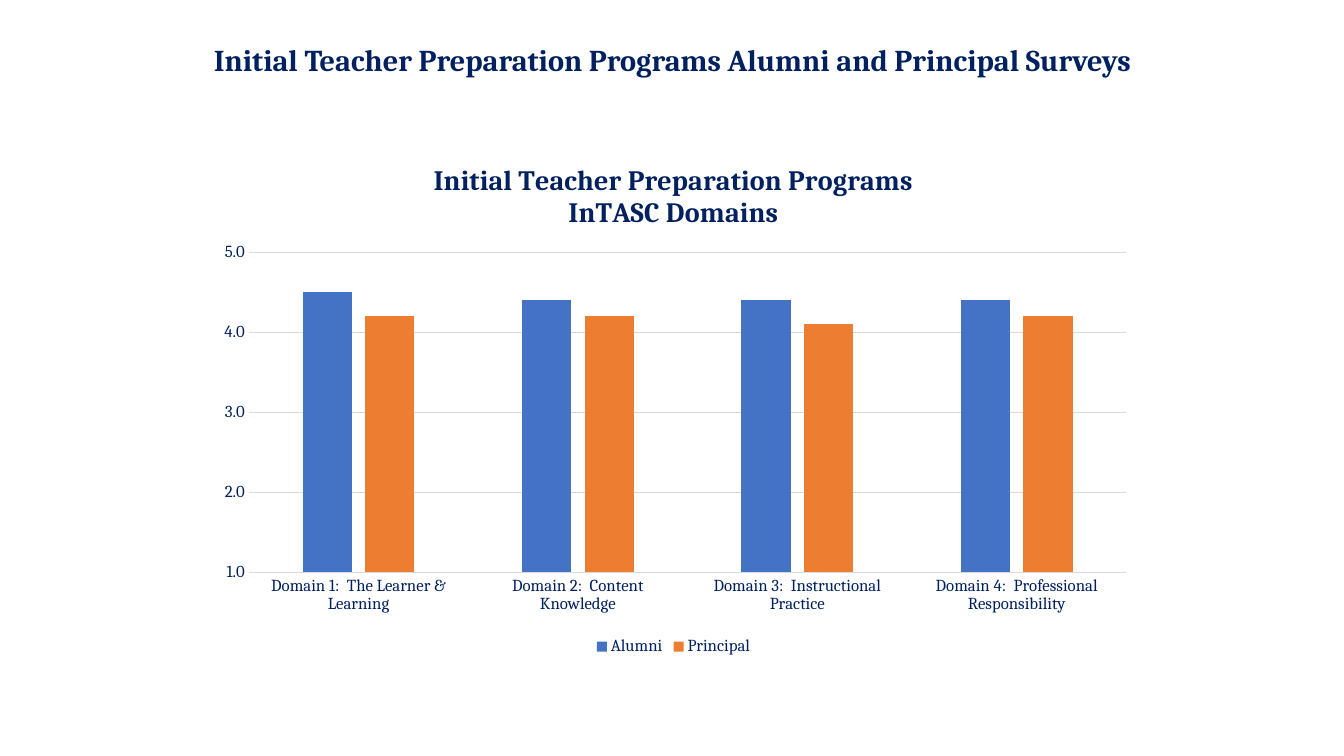
from lxml import etree
from pptx import Presentation
from pptx.chart.data import CategoryChartData
from pptx.dml.color import RGBColor
from pptx.enum.chart import XL_CHART_TYPE, XL_LEGEND_POSITION, XL_TICK_MARK
from pptx.enum.text import MSO_ANCHOR, PP_ALIGN
from pptx.oxml.ns import qn
from pptx.util import Inches, Pt

NAVY = RGBColor(0x00, 0x20, 0x60)
BLUE = RGBColor(0x44, 0x72, 0xC4)
ORANGE = RGBColor(0xED, 0x7D, 0x31)
GRAY = RGBColor(0xD9, 0xD9, 0xD9)

DOMAINS = [
    "Domain 1:  The Learner & Learning",
    "Domain 2:  Content Knowledge",
    "Domain 3:  Instructional Practice",
    "Domain 4:  Professional Responsibility",
]
RATINGS = [
    ("Alumni", (4.5, 4.4, 4.4, 4.4), BLUE),
    ("Principal", (4.2, 4.2, 4.1, 4.2), ORANGE),
]
PLOT_AREA = {"x": 0.05, "y": 0.21, "w": 0.93, "h": 0.62}


def style_font(font, size=12, bold=False):
    font.name = "Cambria"
    font.size = Pt(size)
    font.bold = bold
    font.color.rgb = NAVY


def write(frame, text, size, bold=True, line_spacing=None):
    frame.text = text
    for paragraph in frame.paragraphs:
        paragraph.alignment = PP_ALIGN.CENTER
        paragraph.line_spacing = line_spacing
        for run in paragraph.runs:
            style_font(run.font, size, bold)


prs = Presentation()
prs.slide_width, prs.slide_height = Inches(13.33), Inches(7.5)
slide = prs.slides.add_slide(prs.slide_layouts[5])

# Slide title
title = slide.shapes.title
title.left, title.top = Inches(0.92), Inches(0.4)
title.width, title.height = Inches(11.5), Inches(1.45)
title.text_frame.vertical_anchor = MSO_ANCHOR.TOP
write(title.text_frame,
      "Initial Teacher Preparation Programs Alumni and Principal Surveys",
      size=21.6, line_spacing=0.9)

# Survey chart
survey = CategoryChartData(number_format="0.0")
survey.categories = DOMAINS
for respondents, ratings, _ in RATINGS:
    survey.add_series(respondents, ratings)
chart = slide.shapes.add_chart(
    XL_CHART_TYPE.COLUMN_CLUSTERED,
    Inches(2), Inches(1.43), Inches(9.36), Inches(5.12), survey).chart
style_font(chart.font)
chart.has_title = True
write(chart.chart_title.text_frame,
      "Initial Teacher Preparation Programs\nInTASC Domains", size=20)
chart.chart_title.include_in_layout = False

chart.has_legend = True
chart.legend.position = XL_LEGEND_POSITION.BOTTOM
chart.legend.include_in_layout = False
style_font(chart.legend.font)

columns = chart.plots[0]
columns.gap_width = 219
columns.overlap = -27
columns.vary_by_categories = False
for series, (_, _, color) in zip(columns.series, RATINGS):
    series.format.fill.solid()
    series.format.fill.fore_color.rgb = color

# Axes
domain_axis, rating_axis = chart.category_axis, chart.value_axis
for axis in (domain_axis, rating_axis):
    axis.major_tick_mark = axis.minor_tick_mark = XL_TICK_MARK.NONE
    style_font(axis.tick_labels.font)
rating_axis.minimum_scale, rating_axis.maximum_scale = 1, 5
rating_axis.major_unit = 1
rating_axis.tick_labels.number_format = "0.0"
rating_axis.tick_labels.number_format_is_linked = False
rating_axis.format.line.fill.background()
for line in (domain_axis.format.line, rating_axis.major_gridlines.format.line):
    line.color.rgb = GRAY
    line.width = Pt(0.75)

# Fixed plot area, as fractions of the chart
plot_area = chart.element.find(".//" + qn("c:plotArea"))
layout = plot_area.find(qn("c:layout"))
if layout is None:
    layout = etree.Element(qn("c:layout"))
    plot_area.insert(0, layout)
manual = etree.SubElement(layout, qn("c:manualLayout"))
settings = [("layoutTarget", "inner"), ("xMode", "edge"), ("yMode", "edge")]
for tag, value in settings + list(PLOT_AREA.items()):
    etree.SubElement(manual, qn(f"c:{tag}")).set("val", str(value))

prs.save("out.pptx")
